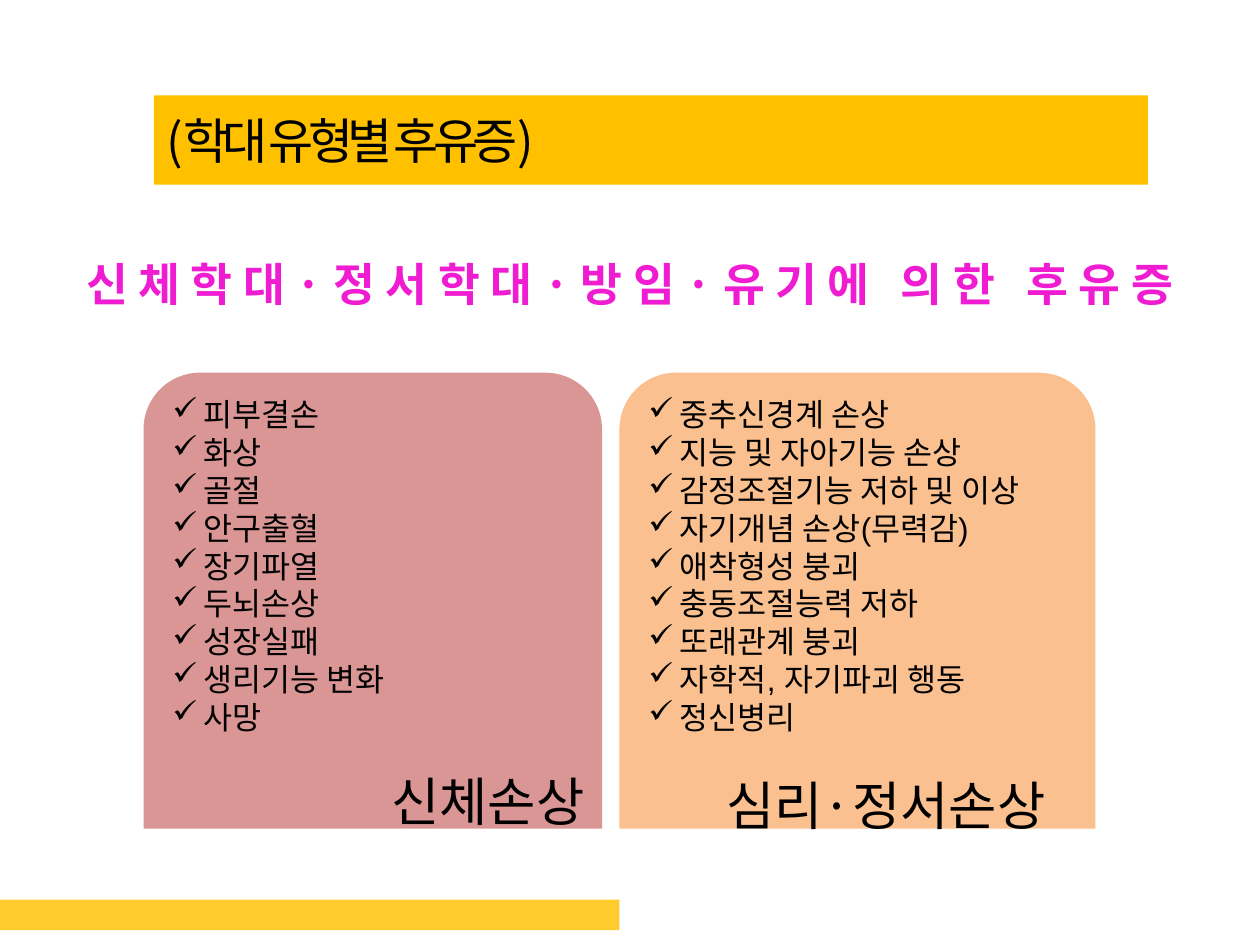
from lxml.etree import SubElement
from pptx import Presentation
from pptx.dml.color import RGBColor
from pptx.enum.shapes import MSO_SHAPE as Shape
from pptx.enum.text import MSO_ANCHOR as Anchor, MSO_AUTO_SIZE as AutoSize, PP_ALIGN as Align
from pptx.oxml.ns import qn
from pptx.util import Pt

AMBER = RGBColor(0xFF, 0xC0, 0x00)
MAGENTA = RGBColor(0xF0, 0x1C, 0xD2)
ROSE = RGBColor(0xD9, 0x96, 0x94)
PEACH = RGBColor(0xFA, 0xC0, 0x90)
BLACK = RGBColor(0, 0, 0)
KOREAN = "Noto Sans CJK KR"
LIST_FONT = "Arial"

PANEL_TOP, PANEL_HEIGHT = 213, 260.5

PHYSICAL = ["피부결손", "화상", "골절", "안구출혈", "장기파열", "두뇌손상",
            "성장실패", "생리기능 변화", "사망"]
EMOTIONAL = ["중추신경계 손상", "지능 및 자아기능 손상", "감정조절기능 저하 및 이상",
             "자기개념 손상(무력감)", "애착형성 붕괴", "충동조절능력 저하",
             "또래관계 붕괴", "자학적, 자기파괴 행동", "정신병리"]


def write(paragraph, text, size=18, font=KOREAN, color=BLACK, bold=False,
          align=Align.LEFT, tracking=0):
    """Add one formatted run; tracking is in points."""
    paragraph.alignment = align
    run = paragraph.add_run()
    run.text = text
    run.font.size = Pt(size)
    run.font.bold = bold
    run.font.color.rgb = color
    run.font.name = font
    properties = run.font._element
    if tracking:
        properties.set("spc", str(tracking * 100))
    if font == KOREAN:
        east_asian = properties.makeelement(qn("a:ea"), {"typeface": font})
        properties.find(qn("a:latin")).addnext(east_asian)


class SlideBuilder:
    def __init__(self, slide, bullet="✓", bullet_indent=18, line_pitch=21.6):
        self.slide = slide
        self.bullet = bullet
        self.bullet_indent = bullet_indent
        self.line_pitch = line_pitch

    def title(self, text, left, top, width, height, fill, **style):
        title = self.slide.shapes.title
        title.left, title.top = Pt(left), Pt(top)
        title.width, title.height = Pt(width), Pt(height)
        title.fill.solid()
        title.fill.fore_color.rgb = fill
        frame = title.text_frame
        frame.auto_size = AutoSize.NONE
        frame.vertical_anchor = Anchor.MIDDLE
        write(frame.paragraphs[0], text, **style)

    def block(self, kind, left, top, width, height, fill, opacity=100):
        block = self.slide.shapes.add_shape(kind, Pt(left), Pt(top), Pt(width), Pt(height))
        block.shadow.inherit = False
        block.line.fill.background()
        block.fill.solid()
        block.fill.fore_color.rgb = fill
        if opacity < 100:
            color = block.fill._xPr.find(qn("a:solidFill"))[0]
            SubElement(color, qn("a:alpha"), val=str(opacity * 1000))
        return block

    def label(self, text, left, top, width, height, **style):
        box = self.slide.shapes.add_textbox(Pt(left), Pt(top), Pt(width), Pt(height))
        box.text_frame.word_wrap = True
        write(box.text_frame.paragraphs[0], text, **style)

    def checklist(self, items, left, width, fill):
        panel = self.block(Shape.ROUND_2_SAME_RECTANGLE, left, PANEL_TOP,
                           width, PANEL_HEIGHT, fill)
        panel.adjustments[0] = 0.124
        panel.adjustments[1] = 0
        frame = panel.text_frame
        frame.word_wrap = True
        frame.vertical_anchor = Anchor.TOP
        for index, item in enumerate(items):
            paragraph = frame.add_paragraph() if index else frame.paragraphs[0]
            paragraph.line_spacing = Pt(self.line_pitch)
            properties = paragraph._p.get_or_add_pPr()
            properties.set("marL", str(Pt(self.bullet_indent)))
            properties.set("indent", str(-Pt(self.bullet_indent)))
            SubElement(properties, qn("a:buChar"), char=self.bullet)
            write(paragraph, item, font=LIST_FONT)


def main():
    deck = Presentation()
    deck.slide_width, deck.slide_height = Pt(720), Pt(540)
    builder = SlideBuilder(deck.slides.add_slide(deck.slide_layouts[5]))

    # Footer band
    builder.block(Shape.RECTANGLE, 0, 514, 354, 17.5, AMBER, opacity=82)

    # Title and heading
    builder.title("(학대 유형별 후유증)", 88, 54.5, 568, 51, AMBER, size=28, tracking=-3)
    builder.label("신체학대·정서학대·방임·유기에 의한 후유증", 0, 142.5, 720, 70.5,
                  size=26, color=MAGENTA, bold=True, align=Align.CENTER, tracking=6)

    # After-effect lists
    builder.checklist(PHYSICAL, 82, 262, ROSE)
    builder.checklist(EMOTIONAL, 354, 272, PEACH)

    # List names
    builder.label("신체손상", 216.5, 436, 135.5, 44, size=30)
    builder.label("심리·정서손상", 408, 438, 227, 44, size=30)

    deck.save("out.pptx")


if __name__ == "__main__":
    main()
